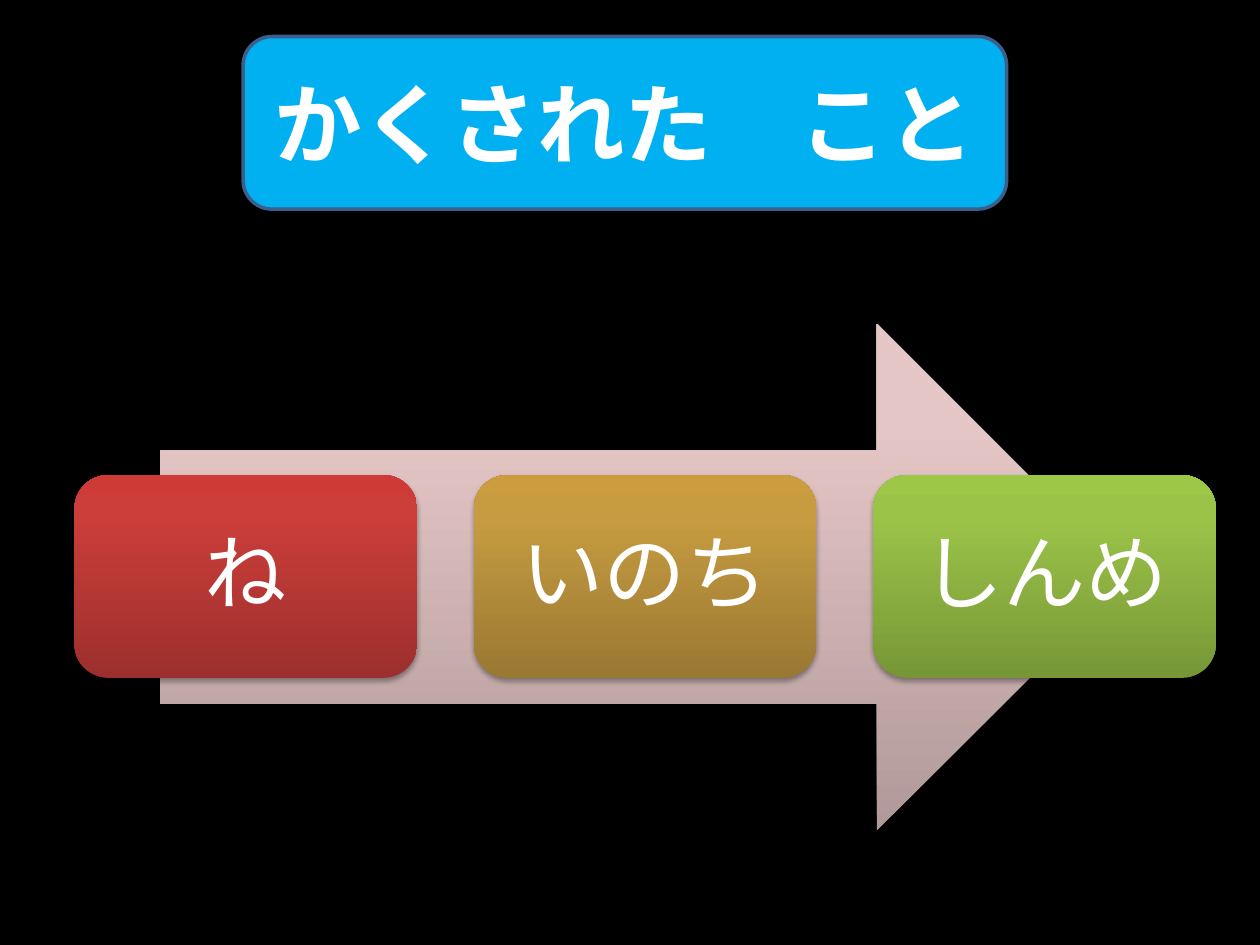
from lxml.etree import SubElement
from pptx import Presentation
from pptx.dml.color import RGBColor
from pptx.enum.shapes import MSO_SHAPE
from pptx.enum.text import MSO_ANCHOR, PP_ALIGN
from pptx.oxml import parse_xml
from pptx.oxml.ns import nsdecls, qn
from pptx.util import Inches, Pt

TITLE = "かくされた\u3000こと".replace("\u3000", "　")
ARROW_COLORS = ("B09998", "E5C6C6", "E6C7C6")
STEPS = [
    ("ね", ("9C2F2D", "CB3E3A", "CE3B37")),
    ("いのち", ("997832", "C79C41", "CB9D3F")),
    ("しんめ", ("779737", "9BC348", "9DC746")),
]
STEP_LEFT, STEP_TOP, STEP_WIDTH, STEP_HEIGHT = 0.59, 3.77, 2.72, 1.61
STEP_PITCH = 3.17
STEP_INSET = 0.28


def rgb(value):
    return RGBColor.from_string(value)


def add_block(slide, preset, left, top, width, height):
    block = slide.shapes.add_shape(
        preset, Inches(left), Inches(top), Inches(width), Inches(height))
    block.shadow.inherit = False
    return block


def fill_upward(block, colors):
    """Fill with a three-stop gradient running from bottom to top, without outline."""
    block.line.fill.background()
    block.fill.gradient()
    block.fill.gradient_angle = 90
    stops = block._element.spPr.find(qn("a:gradFill")).find(qn("a:gsLst"))
    for stop in list(stops):
        stops.remove(stop)
    for position, color in zip((0, 80, 100), colors):
        stop = SubElement(stops, qn("a:gs"), pos=str(position * 1000))
        SubElement(stop, qn("a:srgbClr"), val=color)


def add_drop_shadow(block):
    effects = block._element.spPr.find(qn("a:effectLst"))
    effects.append(parse_xml(
        f'<a:outerShdw {nsdecls("a")} blurRad="{Pt(3.1)}" dist="{Pt(1.8)}" '
        'dir="5400000" rotWithShape="0"><a:srgbClr val="000000">'
        '<a:alpha val="35000"/></a:srgbClr></a:outerShdw>'))


def write_text(block, text, size, font_name, bold=False):
    frame = block.text_frame
    frame.word_wrap = True
    frame.vertical_anchor = MSO_ANCHOR.MIDDLE
    paragraph = frame.paragraphs[0]
    paragraph.alignment = PP_ALIGN.CENTER
    run = paragraph.add_run()
    run.text = text
    run.font.size = Pt(size)
    run.font.bold = bold
    run.font.color.rgb = rgb("FFFFFF")
    run.font.name = font_name
    SubElement(run.font._element, qn("a:ea"), typeface=font_name)
    return frame


def add_step(slide, index, label, colors):
    step = add_block(slide, MSO_SHAPE.ROUNDED_RECTANGLE,
                     STEP_LEFT + index * STEP_PITCH, STEP_TOP, STEP_WIDTH, STEP_HEIGHT)
    fill_upward(step, colors)
    add_drop_shadow(step)
    frame = write_text(step, label, 47, "Noto Sans CJK KR")
    frame.margin_left = frame.margin_right = Inches(STEP_INSET)
    frame.margin_top = frame.margin_bottom = Inches(STEP_INSET)
    paragraph = frame.paragraphs[0]
    paragraph.line_spacing = 0.9
    space_after = SubElement(paragraph._p.get_or_add_pPr(), qn("a:spcAft"))
    SubElement(space_after, qn("a:spcPct"), val="35000")


def main():
    deck = Presentation()
    deck.slide_width, deck.slide_height = Inches(10), Inches(7.5)
    slide = deck.slides.add_slide(deck.slide_layouts[6])
    slide.background.fill.solid()
    slide.background.fill.fore_color.rgb = rgb("000000")

    title = add_block(slide, MSO_SHAPE.ROUNDED_RECTANGLE, 1.93, 0.29, 6.06, 1.37)
    title.fill.solid()
    title.fill.fore_color.rgb = rgb("00B0F0")
    title.line.color.rgb = rgb("3A5F8C")
    title.line.width = Pt(2)
    write_text(title, TITLE, 50, "Arial", bold=True)

    arrow = add_block(slide, MSO_SHAPE.RIGHT_ARROW, 1.27, 2.57, 7.7, 4.02)
    fill_upward(arrow, ARROW_COLORS)

    for index, (label, colors) in enumerate(STEPS):
        add_step(slide, index, label, colors)

    deck.save("out.pptx")


if __name__ == "__main__":
    main()
